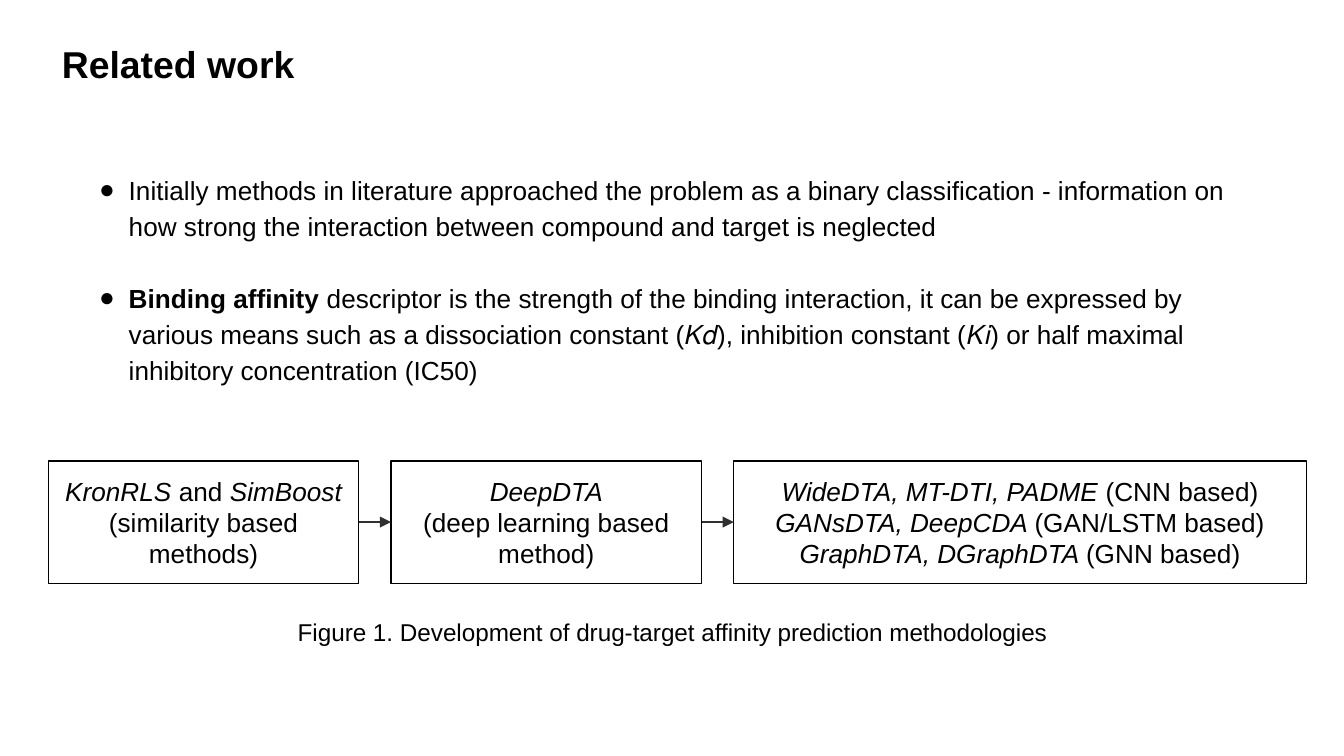
from lxml.etree import SubElement as Sub
from pptx import Presentation
from pptx.dml.color import RGBColor as RGB
from pptx.enum.shapes import MSO_CONNECTOR as Conn, MSO_SHAPE as Shape
from pptx.enum.text import MSO_ANCHOR as Anchor, PP_ALIGN as Align
from pptx.oxml.ns import qn
from pptx.util import Inches, Pt

# Content: a line is a list of (text, style), style "b" bold, "i" italic
TITLE = [[("Related work", "b")]]
POINTS = [
    [("Initially methods in literature approached the problem as a binary "
      "classification - information on how strong the interaction between "
      "compound and target is neglected", "")],
    [("Binding affinity ", "b"),
     ("descriptor is the strength of the binding interaction, it can be "
      "expressed by various means such as a dissociation constant (𝐾𝑑), "
      "inhibition constant (𝐾𝑖) or half maximal inhibitory concentration "
      "(IC50)", "")],
]
STAGES = [  # width, lines
    (2.31, [[("KronRLS", "i"), (" and ", ""), ("SimBoost", "i")],
            [("(similarity based methods)", "")]]),
    (2.31, [[("DeepDTA", "i")], [("(deep learning based method)", "")]]),
    (4.26, [[("WideDTA, MT-DTI, PADME ", "i"), ("(CNN based)", "")],
            [("GANsDTA, DeepCDA ", "i"), ("(GAN/LSTM based)", "")],
            [("GraphDTA, DGraphDTA ", "i"), ("(GNN based)", "")]]),
]
CAPTION = [[("Figure 1. Development of drug-target affinity prediction "
             "methodologies", "")]]

THEME = {
    "font": "Arial", "ink": RGB(0, 0, 0), "paper": RGB(255, 255, 255),
    "arrow": RGB(0x30, 0x30, 0x30), "line": Pt(0.75),
    "title": Pt(20), "body": Pt(14), "caption": Pt(13),
}
LEFT, TOP, HIGH, GAP = 0.36, 3.43, 0.91, 0.24


def write(shape, lines, size, align=Align.LEFT, anchor=Anchor.TOP):
    frame = shape.text_frame
    frame.word_wrap = True
    frame.vertical_anchor = anchor
    frame.margin_left = frame.margin_right = Inches(0.1)
    frame.margin_top = frame.margin_bottom = Inches(0.1)
    for n, line in enumerate(lines):
        para = frame.add_paragraph() if n else frame.paragraphs[0]
        para.alignment = align
        for text, style in line:
            run = para.add_run()
            run.text = text
            font = run.font
            font.name, font.size = THEME["font"], THEME[size]
            font.bold, font.italic = style == "b", style == "i"
            font.color.rgb = THEME["ink"]
    return frame


def bullet(para):
    props = para._p.get_or_add_pPr()
    props.set("marL", str(Inches(0.31)))
    props.set("indent", str(Inches(-0.22)))
    color = Sub(props, qn("a:buClr"))
    Sub(color, qn("a:srgbClr"), val=str(THEME["ink"]))
    Sub(props, qn("a:buFont"), typeface=THEME["font"])
    Sub(props, qn("a:buChar"), char="●")


def join(shapes, start, end):
    wire = shapes.add_connector(Conn.STRAIGHT, 0, 0, 0, 0)
    wire.begin_connect(start, 3)
    wire.end_connect(end, 1)
    wire.line.color.rgb, wire.line.width = THEME["arrow"], THEME["line"]
    props = wire._element.spPr
    Sub(props.find(qn("a:ln")), qn("a:tailEnd"), type="triangle")
    Sub(props, qn("a:effectLst"))


def main():
    deck = Presentation()
    deck.slide_width = Inches(10)
    deck.slide_height = deck.slide_width * 9 // 16
    slide = deck.slides.add_slide(deck.slide_layouts[5])
    shapes = slide.shapes
    slide.background.fill.solid()
    slide.background.fill.fore_color.rgb = THEME["paper"]

    # Title
    title = shapes.title
    title.left, title.top = Inches(LEFT), Inches(0.21)
    title.width, title.height = Inches(1.96), Inches(0.54)
    write(title, TITLE, "title").word_wrap = False

    # Bullet points, one line apart
    body = shapes.add_textbox(Inches(0.55), Inches(1.16),
                              Inches(8.7), Inches(1.79))
    for n, para in enumerate(write(body, POINTS, "body").paragraphs):
        bullet(para)
        para.line_spacing = 1.15
        if n:
            para.space_before = Pt(19.3)

    # Stages from left to right, joined by arrows
    left, last = LEFT, None
    for width, lines in STAGES:
        box = shapes.add_shape(Shape.RECTANGLE, Inches(left), Inches(TOP),
                               Inches(width), Inches(HIGH))
        box.shadow.inherit = False
        box.fill.background()
        box.line.color.rgb, box.line.width = THEME["ink"], THEME["line"]
        write(box, lines, "body", Align.CENTER, Anchor.MIDDLE)
        if last is not None:
            join(shapes, last, box)
        left, last = left + width + GAP, box

    # Caption
    note = shapes.add_textbox(Inches(1.36), Inches(4.49),
                              Inches(7.28), Inches(0.42))
    write(note, CAPTION, "caption", Align.CENTER)

    deck.save("out.pptx")


if __name__ == "__main__":
    main()
